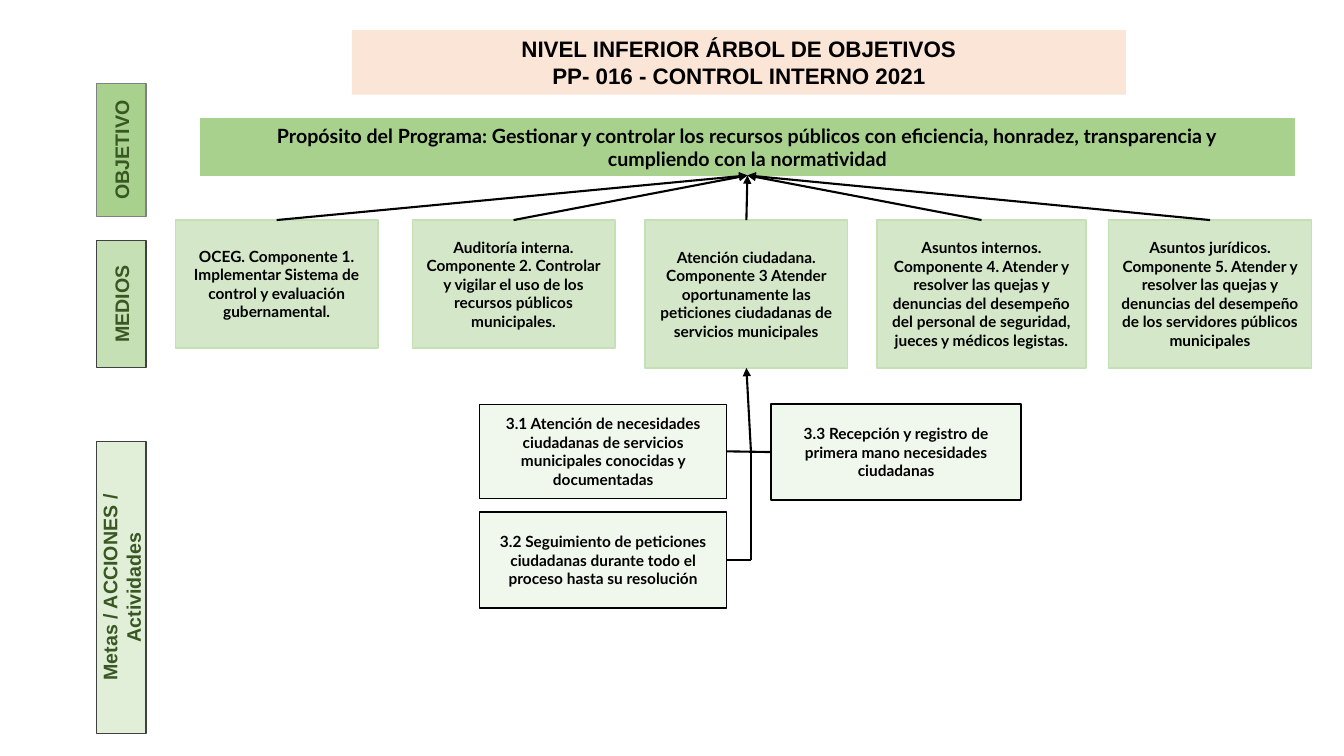
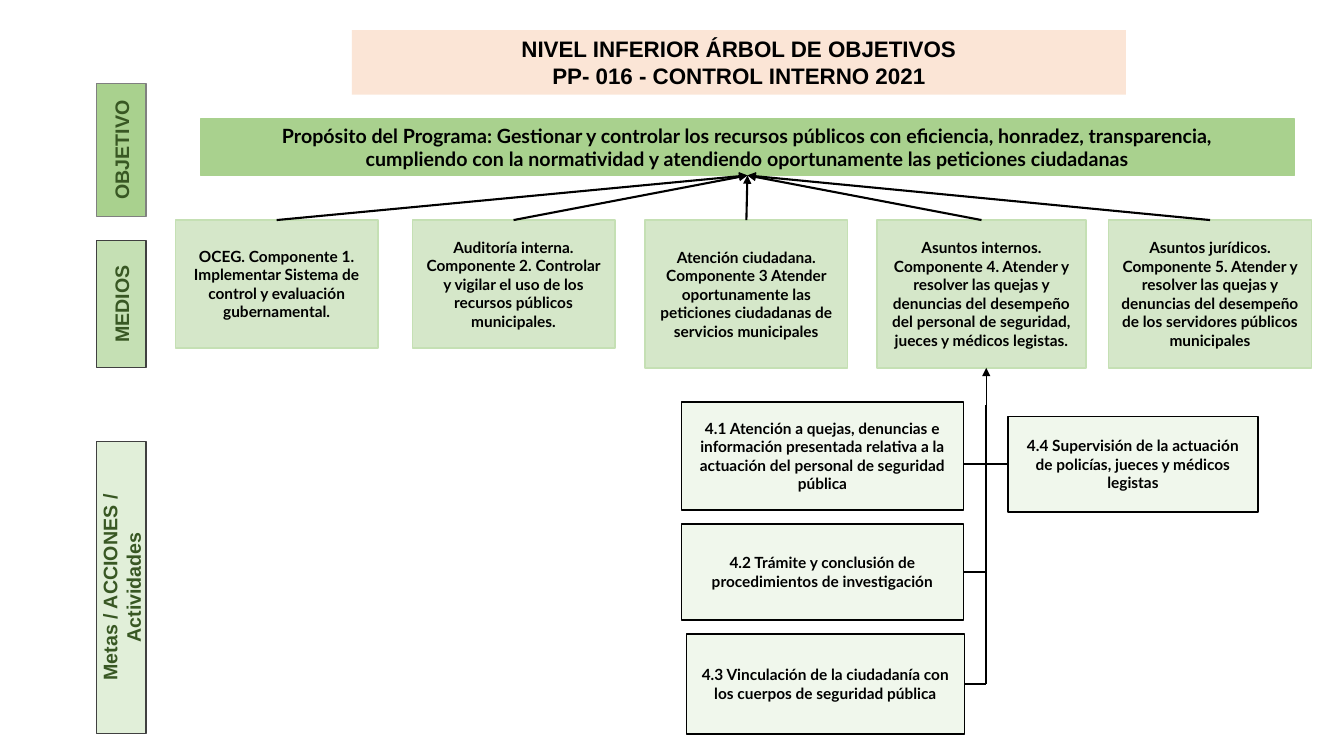
from dataclasses import dataclass

from lxml.etree import SubElement
from pptx import Presentation
from pptx.dml.color import RGBColor
from pptx.enum.shapes import MSO_CONNECTOR as Conn, MSO_SHAPE as Shape
from pptx.enum.text import MSO_ANCHOR as Anchor, MSO_AUTO_SIZE as AutoSize, PP_ALIGN as Align
from pptx.oxml.ns import qn
from pptx.util import Pt


@dataclass(frozen=True)
class Style:
    fill: str
    line: str = None
    alpha: int = 100
    font: str = "Lato"
    size: float = 11
    ink: str = "000000"


@dataclass(frozen=True)
class Theme:
    title: Style = Style("FBE5D6", font="Arial", size=16)
    purpose: Style = Style("A9D18E", "A9D18E", size=14)
    component: Style = Style("70AD47", "C5E0B4", 29)
    activity: Style = Style("C5E0B4", "000000", 25)
    goal: Style = Style("A9D18E", "808080", 100, "Arial", 14, "385723")
    means: Style = Style("C5E0B4", "404040", 100, "Arial", 14, "385723")
    actions: Style = Style("C5E0B4", "404040", 50, "Arial", 14, "385723")
    connector: str = "000000"
    connector_width: float = 1.5
    box_line: float = 1


THEME = Theme()

TITLE = "NIVEL INFERIOR ÁRBOL DE OBJETIVOS\nPP- 016 - CONTROL INTERNO 2021"
TITLE_BOX = (251.3, 21.6, 553, 46)
PURPOSE_BOX = (143.3, 85, 781.2, 40.3)

LABEL_CENTER, LABEL_WIDTH = 86.6, 35.3
LABELS = [
    ("OBJETIVO", 59.7, 95, THEME.goal),
    ("MEDIOS", 171.9, 90.7, THEME.means),
    ("Metas / ACCIONES / Actividades", 315.2, 208.8, THEME.actions),
]

COMPONENT_TOP = 157.2
COMPONENTS = [
    ("OCEG. Componente 1. Implementar Sistema de control y evaluación gubernamental.",
     125.3, 144.7, 91.4),
    ("Auditoría interna. Componente 2. Controlar y vigilar el uso de los recursos "
     "públicos municipales.", 294.5, 144.7, 91.4),
    ("Atención ciudadana. Componente 3 Atender oportunamente las peticiones ciudadanas "
     "de servicios municipales", 460.8, 144.7, 105.6),
    ("Asuntos internos. Componente 4. Atender y resolver las quejas y denuncias del "
     "desempeño del personal de seguridad, jueces y médicos legistas.", 626.4, 149.4, 105.6),
    ("Asuntos jurídicos. Componente 5. Atender y resolver las quejas y denuncias del "
     "desempeño de los servidores públicos municipales", 792, 144.7, 105.6),
]

SLIDES = [
    {
        "purpose": "Propósito del Programa: Gestionar y controlar los recursos públicos con "
                   "eficiencia, honradez, transparencia y\ncumpliendo con la normatividad",
        "parent": 2,
        "trunk": {"x": 536.4, "top": 322.5, "tip": 534, "arrow_width": 1.5},
        "left": [
            ("3.1 Atención de necesidades ciudadanas de servicios municipales conocidas "
             "y documentadas", (342.7, 288.9, 176.4, 67)),
            ("3.2 Seguimiento de peticiones ciudadanas durante todo el proceso hasta su "
             "resolución", (342.7, 365.8, 176.4, 68.4)),
        ],
        "right": ("3.3 Recepción y registro de primera mano necesidades ciudadanas",
                  (550.8, 288.7, 178.6, 68.4)),
    },
    {
        "purpose": "Propósito del Programa: Gestionar y controlar los recursos públicos con "
                   "eficiencia, honradez, transparencia,\ncumpliendo con la normatividad y "
                   "atendiendo oportunamente las peticiones ciudadanas",
        "parent": 3,
        "trunk": {"x": 704.5, "top": 289.4, "tip": 704.5, "arrow_width": 0.5},
        "left": [
            ("4.1 Atención a quejas, denuncias e información presentada relativa a la "
             "actuación del personal de seguridad pública", (486.7, 287.3, 201.6, 77)),
            ("4.2 Trámite y conclusión de procedimientos de investigación",
             (486.7, 374.4, 201.6, 68.4)),
            ("4.3 Vinculación de la ciudadanía con los cuerpos de seguridad pública",
             (490.3, 452.9, 198.7, 71.3)),
        ],
        "right": ("4.4 Supervisión de la actuación de policías, jueces y médicos legistas",
                  (720, 297.4, 178.6, 68.4)),
    },
]


def rgb(value):
    return RGBColor.from_string(value)


def dress(sp, text, style):
    sp.fill.solid()
    sp.fill.fore_color.rgb = rgb(style.fill)
    if style.alpha < 100:
        color = sp.element.spPr.find(qn("a:solidFill")).find(qn("a:srgbClr"))
        SubElement(color, qn("a:alpha"), val=str(style.alpha * 1000))
    if style.line:
        sp.line.color.rgb = rgb(style.line)
        sp.line.width = Pt(THEME.box_line)
    else:
        sp.line.fill.background()
    tf = sp.text_frame
    tf.text = text
    tf.word_wrap = True
    tf.auto_size = AutoSize.NONE
    tf.vertical_anchor = Anchor.MIDDLE
    for p in tf.paragraphs:
        p.alignment = Align.CENTER
        for r in p.runs:
            r.font.name = style.font
            r.font.size = Pt(style.size)
            r.font.bold = True
            r.font.color.rgb = rgb(style.ink)


def add_box(s, text, box, style):
    sp = s.shapes.add_shape(Shape.FLOWCHART_PROCESS, *map(Pt, box))
    sp.shadow.inherit = False
    dress(sp, text, style)
    return sp


def site_point(sp, site):
    x, y, w, h = sp.left.pt, sp.top.pt, sp.width.pt, sp.height.pt
    return [(x + w / 2, y), (x, y + h / 2), (x + w / 2, y + h), (x + w, y + h / 2)][site]


def snap(sp, site, point):
    near = all(abs(a - b) < 2 for a, b in zip(site_point(sp, site), point))
    return (sp, site) if near else point


def add_line(s, start, end, arrow=False, width=THEME.connector_width):
    ends = (start, end)
    joined = [hasattr(e[0], "shape_id") for e in ends]
    points = [site_point(*e) if j else e for e, j in zip(ends, joined)]
    line = s.shapes.add_connector(Conn.STRAIGHT, *(Pt(v) for pt in points for v in pt))
    for e, j, connect in zip(ends, joined, (line.begin_connect, line.end_connect)):
        if j:
            connect(*e)
    line.line.color.rgb = rgb(THEME.connector)
    line.line.width = Pt(width)
    if arrow:
        SubElement(line.line._get_or_add_ln(), qn("a:tailEnd"), type="triangle")
    SubElement(line.element.spPr, qn("a:effectLst"))


def add_frame(s, purpose_text):
    title = s.shapes.title
    title.left, title.top, title.width, title.height = map(Pt, TITLE_BOX)
    dress(title, TITLE, THEME.title)
    for text, top, length, style in LABELS:
        box = (LABEL_CENTER - length / 2, top + (length - LABEL_WIDTH) / 2, length, LABEL_WIDTH)
        add_box(s, text, box, style).rotation = 270
    purpose = add_box(s, purpose_text, PURPOSE_BOX, THEME.purpose)
    components = [add_box(s, text, (x, COMPONENT_TOP, w, h), THEME.component)
                  for text, x, w, h in COMPONENTS]
    for component in components:
        add_line(s, (component, 0), (purpose, 2), arrow=True)
    return components


def add_activities(s, data, parent):
    trunk = data["trunk"]
    left = [add_box(s, text, box, THEME.activity) for text, box in data["left"]]
    right = add_box(s, *data["right"], THEME.activity)
    first, *others = left

    cross_end = (site_point(first, 3)[0], site_point(right, 1)[1])
    add_line(s, (right, 1), snap(first, 3, cross_end))
    for box in others:
        add_line(s, (box, 3), (trunk["x"], site_point(box, 3)[1]))

    top = (trunk["x"], trunk["top"])
    add_line(s, top, (trunk["x"], site_point(left[-1], 3)[1]))
    tip = (trunk["tip"], site_point(parent, 2)[1])
    add_line(s, top, snap(parent, 2, tip), True, trunk["arrow_width"])


def main():
    prs = Presentation()
    prs.slide_width, prs.slide_height = Pt(960), Pt(540)
    for data in SLIDES:
        s = prs.slides.add_slide(prs.slide_layouts[5])
        components = add_frame(s, data["purpose"])
        add_activities(s, data, components[data["parent"]])
    prs.save("out.pptx")


if __name__ == "__main__":
    main()
